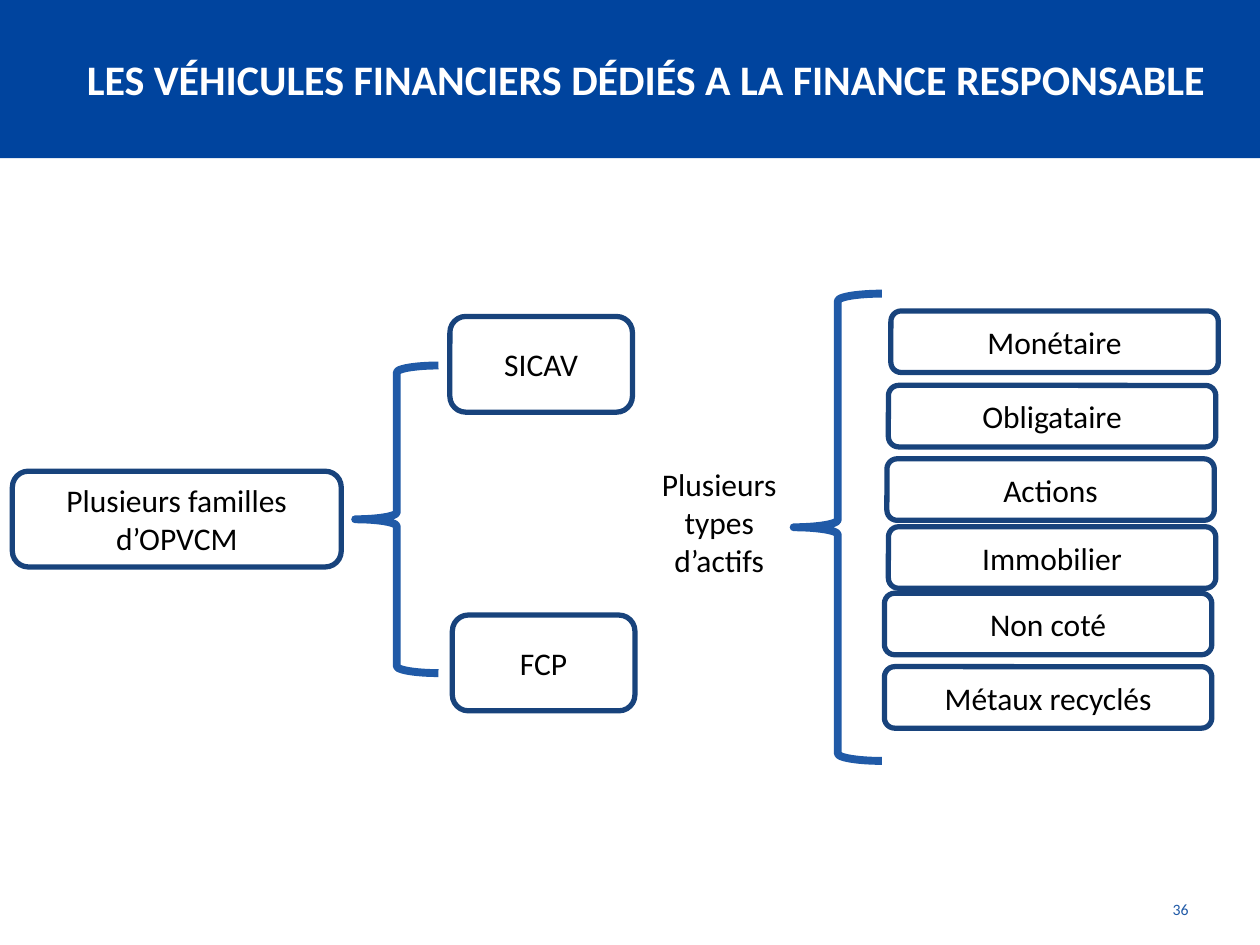
from pptx import Presentation
from pptx.dml.color import RGBColor
from pptx.enum.shapes import MSO_SHAPE
from pptx.enum.text import MSO_ANCHOR, PP_ALIGN
from pptx.util import Cm, Pt

RECTANGLE = MSO_SHAPE.RECTANGLE
ROUNDED = MSO_SHAPE.ROUNDED_RECTANGLE
LEFT_BRACE = MSO_SHAPE.LEFT_BRACE
MIDDLE = MSO_ANCHOR.MIDDLE
LEFT, CENTER, RIGHT = PP_ALIGN.LEFT, PP_ALIGN.CENTER, PP_ALIGN.RIGHT
FONT = "Calibri"
TITLE_ONLY = 5


def color(value):
    return RGBColor.from_string(value)


def write(shape, text, size=18, text_color="000000", align=CENTER, bold=False):
    frame = shape.text_frame
    frame.word_wrap = True
    frame.text = text
    paragraph = frame.paragraphs[0]
    paragraph.alignment = align
    font = paragraph.runs[0].font
    font.name, font.size, font.bold = FONT, Pt(size), bold
    font.color.rgb = color(text_color)


def add_shape(slide, kind, left, top, width, height, fill=None, line=None, weight=3):
    shape = slide.shapes.add_shape(kind, Cm(left), Cm(top), Cm(width), Cm(height))
    shape.shadow.inherit = False
    if fill:
        shape.fill.solid()
        shape.fill.fore_color.rgb = color(fill)
    else:
        shape.fill.background()
    if line:
        shape.line.color.rgb = color(line)
        shape.line.width = Pt(weight)
    else:
        shape.line.fill.background()
    return shape


def add_box(slide, text, left, top, width, height):
    box = add_shape(slide, ROUNDED, left, top, width, height, "FFFFFF", "18437C")
    box.text_frame.vertical_anchor = MIDDLE
    write(box, text)


def add_brace(slide, left, top, width, height):
    add_shape(slide, LEFT_BRACE, left, top, width, height, line="205AA7", weight=4.5)


def add_text(slide, text, left, top, width, height, **style):
    box = slide.shapes.add_textbox(Cm(left), Cm(top), Cm(width), Cm(height))
    write(box, text, **style)


def add_header(slide, left, top, width, height):
    band = add_shape(slide, RECTANGLE, left, top, width, height, "00449E")
    title = slide.shapes.title
    band.element.addnext(title.element)
    title.left, title.top = Cm(left + 1.3), Cm(top)
    title.width, title.height = Cm(width - 1.6), Cm(height)
    title.text_frame.vertical_anchor = MIDDLE
    title.text_frame.margin_left = Cm(0.45)
    write(title, "LES VÉHICULES FINANCIERS DÉDIÉS A LA FINANCE RESPONSABLE",
          size=24, text_color="FFFFFF", align=LEFT, bold=True)


def add_fund_families(slide, left, top):
    add_box(slide, "Plusieurs familles d’OPVCM", left, top + 3.12, 6.63, 1.93)
    add_brace(slide, left + 6.91, top + 0.99, 1.68, 6.2)
    for text, x, y in (("SICAV", 8.82, 0), ("FCP", 8.87, 6.02)):
        add_box(slide, text, left + x, top + y, 3.68, 1.93)


def add_asset_types(slide, left, top):
    add_text(slide, "Plusieurs types d’actifs", left, top + 3.33, 3.4, 2.57)
    add_brace(slide, left + 3.2, top, 1.78, 9.42)
    assets = (
        ("Monétaire", 5.16, 0.35),
        ("Obligataire", 5.11, 1.85),
        ("Actions", 5.08, 3.33),
        ("Immobilier", 5.11, 4.7),
        ("Non coté", 5.03, 6.04),
        ("Métaux recyclés", 5.03, 7.52),
    )
    for text, x, y in assets:
        add_box(slide, text, left + x, top + y, 6.6, 1.24)


def main():
    presentation = Presentation()
    presentation.slide_width, presentation.slide_height = Cm(25.4), Cm(19.05)
    slide = presentation.slides.add_slide(presentation.slide_layouts[TITLE_ONLY])
    add_header(slide, 0, 0, 25.4, 3.19)
    add_fund_families(slide, 0.25, 6.38)
    add_asset_types(slide, 12.8, 5.92)
    add_text(slide, "36", 22.71, 18.01, 1.5, 0.99,
             size=9, text_color="205AA7", align=RIGHT)
    presentation.save("out.pptx")


if __name__ == "__main__":
    main()
